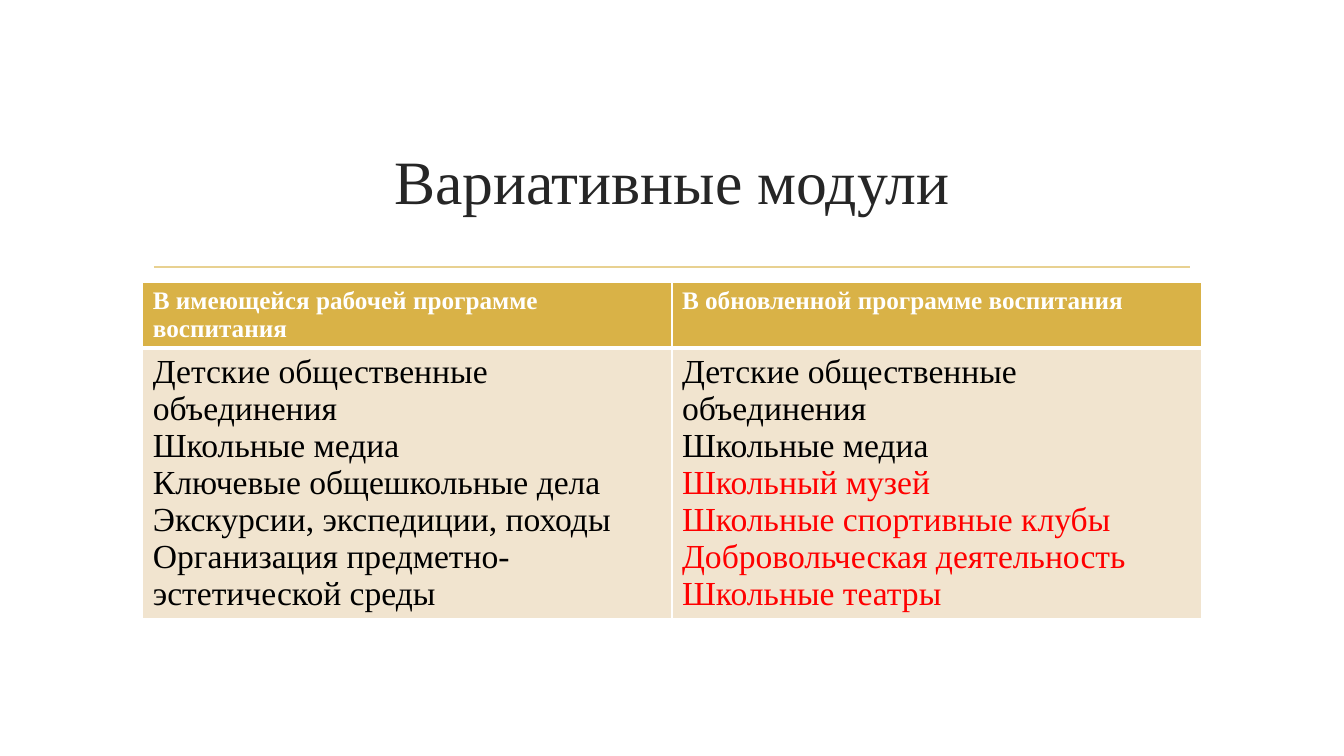
import pptx
import pptx.dml.color
import pptx.enum.text
import pptx.oxml
import pptx.oxml.ns
import pptx.util

Pt = pptx.util.Pt
FONT = "Times New Roman"
WHITE, BLACK, RED = "FFFFFF", "000000", "FF0000"
GOLD, CREAM = "D9B247", "F1E4CF"

SHARED_MODULES = ["Детские общественные объединения", "Школьные медиа"]
CURRENT_MODULES = [
    "Ключевые общешкольные дела",
    "Экскурсии, экспедиции, походы",
    "Организация предметно-эстетической среды",
]
NEW_MODULES = [
    "Школьный музей",
    "Школьные спортивные клубы",
    "Добровольческая деятельность",
    "Школьные театры",
]
# Each column: heading, then (module, colour) lines
COLUMNS = [
    ("В имеющейся рабочей программе воспитания",
     [(module, BLACK) for module in SHARED_MODULES + CURRENT_MODULES]),
    ("В обновленной программе воспитания",
     [(module, BLACK) for module in SHARED_MODULES]
     + [(module, RED) for module in NEW_MODULES]),
]


def color(value):
    return pptx.dml.color.RGBColor.from_string(value)


def format_text(paragraph, text_color, **values):
    for name, value in {"name": FONT, **values}.items():
        setattr(paragraph.font, name, value)
    paragraph.font.color.rgb = color(text_color)


def add_title(slide, left, top, width, height):
    title = slide.shapes.title
    box = {"left": left, "top": top, "width": width, "height": height}
    for name, value in box.items():
        setattr(title, name, Pt(value))
    title.text_frame.text = "Вариативные модули"
    title.text_frame.vertical_anchor = pptx.enum.text.MSO_ANCHOR.MIDDLE
    paragraph = title.text_frame.paragraphs[0]
    paragraph.alignment = pptx.enum.text.PP_ALIGN.CENTER
    format_text(paragraph, "262626", size=Pt(44))


def add_rule(slide, left, top, width):
    rule = slide.shapes.add_connector(
        pptx.enum.shapes.MSO_CONNECTOR.STRAIGHT,
        Pt(left), Pt(top), Pt(left + width), Pt(top))
    rule.line.color.rgb = color("E8D191")
    rule.line.width = Pt(1.25)
    properties = rule.element.spPr
    properties.append(pptx.oxml.parse_xml(
        f'<a:effectLst {pptx.oxml.ns.nsdecls("a")}/>'))


def set_borders(cell, **widths):
    properties = cell._tc.get_or_add_tcPr()
    for index, side in enumerate("LRTB"):
        border = pptx.oxml.parse_xml(
            f'<a:ln{side} {pptx.oxml.ns.nsdecls("a")} '
            f'w="{Pt(widths.get(side, 1))}"><a:solidFill>'
            f'<a:srgbClr val="{WHITE}"/></a:solidFill></a:ln{side}>')
        properties.insert(index, border)


def fill_cell(cell, lines, fill, **values):
    cell.fill.solid()
    cell.fill.fore_color.rgb = color(fill)
    cell.text = "\n".join(text for text, _ in lines)
    for paragraph, (_, text_color) in zip(cell.text_frame.paragraphs, lines):
        format_text(paragraph, text_color, **values)


def add_modules_table(slide, left, top, width, header_height, body_height):
    table = slide.shapes.add_table(
        2, len(COLUMNS), Pt(left), Pt(top), Pt(width),
        Pt(header_height + body_height)).table
    for row, height in zip(table.rows, (header_height, body_height)):
        row.height = Pt(height)
    for column, (heading, modules) in enumerate(COLUMNS):
        table.columns[column].width = Pt(width / len(COLUMNS))
        header, body = table.cell(0, column), table.cell(1, column)
        fill_cell(header, [(heading, WHITE)], GOLD, size=Pt(18), bold=True)
        fill_cell(body, modules, CREAM, size=Pt(24), bold=False)
        # The heading is set off by a thicker line
        set_borders(header, B=3)
        set_borders(body, T=3)


def build_modules_slide(presentation):
    slide = presentation.slides.add_slide(presentation.slide_layouts[5])
    left, width = 102, 756
    add_rule(slide, left + 8, 190.8, width - 16)
    add_title(slide, left, 77, width, 103)
    add_modules_table(slide, left, 201.6, width, 46, 190)


def main():
    presentation = pptx.Presentation()
    presentation.slide_width = Pt(960)
    presentation.slide_height = Pt(540)
    build_modules_slide(presentation)
    presentation.save("out.pptx")


if __name__ == "__main__":
    main()
